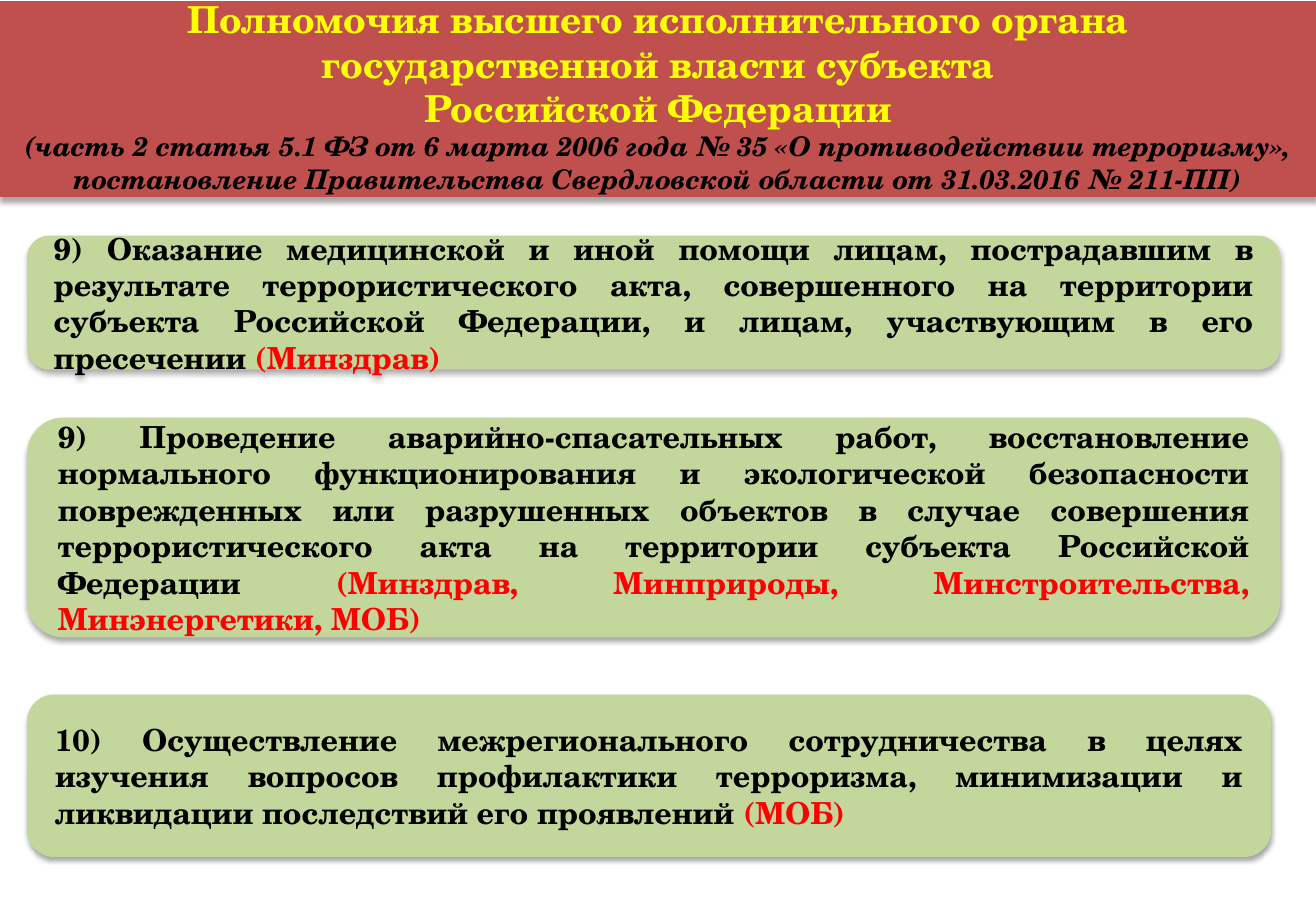
import pptx
import pptx.util
import pptx.dml.color
import pptx.enum.shapes
import pptx.enum.text
import pptx.oxml.ns
from lxml import etree

Pt = pptx.util.Pt
ALIGN = pptx.enum.text.PP_ALIGN
SHAPE = pptx.enum.shapes.MSO_SHAPE

# Content
TITLE = ("Полномочия высшего исполнительного органа государственной власти субъекта\n"
         "Российской Федерации")
BASIS = ("(часть 2 статья 5.1 ФЗ от 6 марта 2006 года № 35 «О противодействии терроризму», "
         "постановление Правительства Свердловской области от 31.03.2016 № 211-ПП)")
# duty, bodies in charge, top, width, height
DUTIES = [
    ("9) Оказание медицинской и иной помощи лицам, пострадавшим в результате "
     "террористического акта, совершенного на территории субъекта Российской Федерации, "
     "и лицам, участвующим в его пресечении ",
     "(Минздрав)", 139.7, 743, 79.4),
    ("9) Проведение аварийно-спасательных работ, восстановление нормального "
     "функционирования и экологической безопасности поврежденных или разрушенных объектов "
     "в случае совершения террористического акта на территории субъекта Российской Федерации ",
     "(Минздрав, Минприроды, Минстроительства, Минэнергетики, МОБ)", 247.5, 743, 130.3),
    ("10) Осуществление межрегионального сотрудничества в целях изучения вопросов "
     "профилактики терроризма, минимизации и ликвидации последствий его проявлений ",
     "(МОБ)", 411.8, 737.5, 96.2),
]

THEME = {
    "font": "TeX Gyre Schola",
    "band": "C0504D", "card": "C3D69B", "title": "FFFF00",
    "ink": "000000", "accent": "FF0000",
    "title_size": 22, "basis_size": 16, "duty_size": 18,
}
WIDTH, HEIGHT = 780, 540
LEFT = 16


def tint(name):
    return pptx.dml.color.RGBColor.from_string(THEME[name])


def write(para, text, size, color="ink", italic=False, align=ALIGN.CENTER):
    para.alignment = align
    for num, line in enumerate(text.split("\n")):
        if num:
            para.add_line_break()
        run = para.add_run()
        run.text = line
        font = run.font
        font.name, font.size = THEME["font"], Pt(THEME[size])
        font.bold, font.italic = True, italic
        font.color.rgb = tint(color)


def shade(shape, blur, dist):
    """Give the shape a soft shadow that falls straight down."""
    shape.shadow.inherit = False
    qn = pptx.oxml.ns.qn
    effects = shape._element.spPr.find(qn("a:effectLst"))
    outer = etree.SubElement(effects, qn("a:outerShdw"), blurRad=str(Pt(blur)),
                             dist=str(Pt(dist)), dir="5400000", rotWithShape="0")
    color = etree.SubElement(outer, qn("a:srgbClr"), val=THEME["ink"])
    etree.SubElement(color, qn("a:alpha"), val="35000")


def panel(slide, kind, box, fill, insets, blur, dist):
    shape = slide.shapes.add_shape(kind, *map(Pt, box))
    shape.fill.solid()
    shape.fill.fore_color.rgb = tint(fill)
    shape.line.fill.background()
    shade(shape, blur, dist)
    frame = shape.text_frame
    frame.word_wrap = True
    frame.vertical_anchor = pptx.enum.text.MSO_ANCHOR.MIDDLE
    (frame.margin_left, frame.margin_top,
     frame.margin_right, frame.margin_bottom) = map(Pt, insets)
    return frame


def main():
    deck = pptx.Presentation()
    deck.slide_width, deck.slide_height = Pt(WIDTH), Pt(HEIGHT)
    slide = deck.slides.add_slide(deck.slide_layouts[6])

    # Title band
    head = panel(slide, SHAPE.RECTANGLE, (0, 0.7, WIDTH, 116), "band",
                 (8, 0, 8, 4), 3, 3)
    write(head.paragraphs[0], TITLE, "title_size", color="title")
    write(head.add_paragraph(), BASIS, "basis_size", italic=True)

    # Duty cards
    for duty, bodies, top, width, height in DUTIES:
        card = panel(slide, SHAPE.ROUNDED_RECTANGLE, (LEFT, top, width, height),
                     "card", (12,) * 4, 3.1, 1.8)
        para = card.paragraphs[0]
        write(para, duty, "duty_size", align=ALIGN.JUSTIFY)
        write(para, bodies, "duty_size", color="accent", align=ALIGN.JUSTIFY)

    deck.save("out.pptx")


if __name__ == "__main__":
    main()
